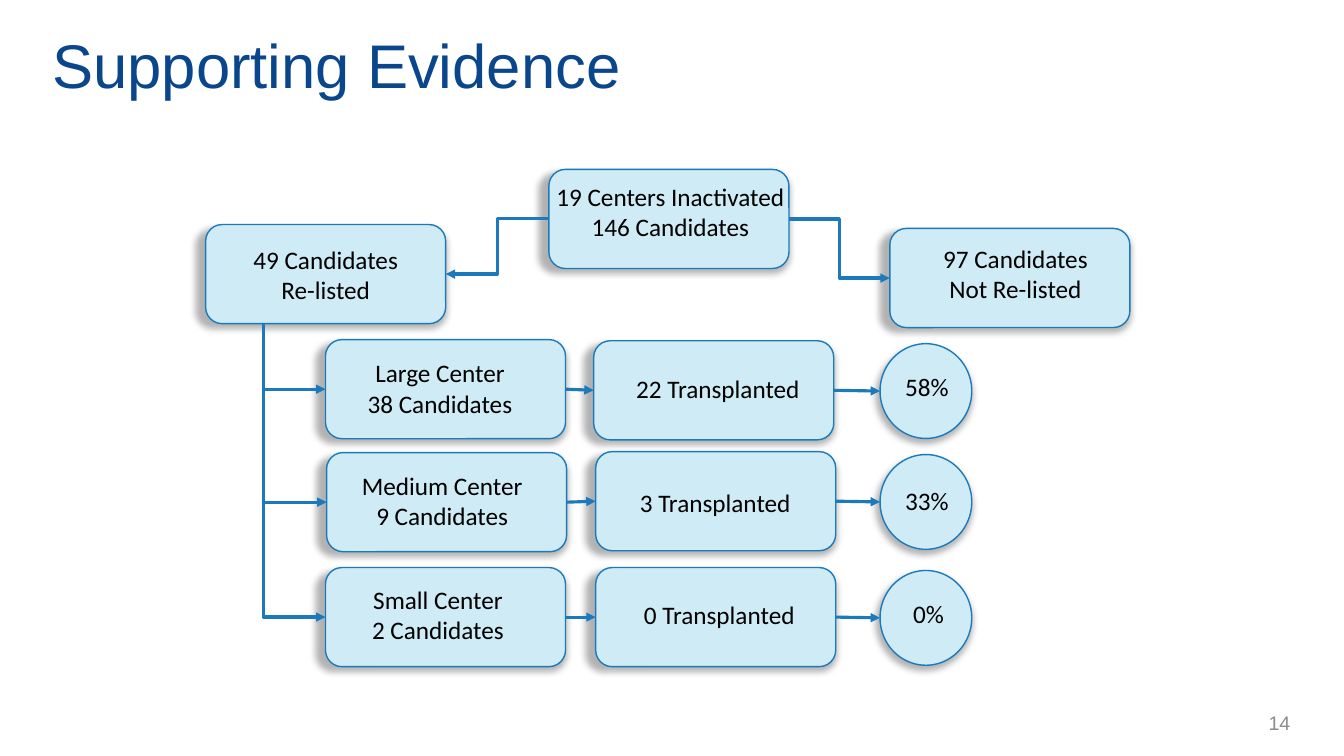
import pptx
import pptx.util
import pptx.dml.color
import pptx.enum.shapes
import pptx.enum.text
import pptx.oxml
import pptx.oxml.ns
from lxml import etree

Pt = pptx.util.Pt
Shape = pptx.enum.shapes.MSO_SHAPE
Link = pptx.enum.shapes.MSO_CONNECTOR
Align = pptx.enum.text.PP_ALIGN
Anchor = pptx.enum.text.MSO_ANCHOR
qn = pptx.oxml.ns.qn

COLORS = {"title": "0A468C", "fill": "CFEBF6", "line": "1C7ABC",
          "text": "000000", "page": "8C8C8C"}
BOX = (171.5, 70.8)
DISC = (65.5, 67.7)
SHADOW = (
    '<a:effectLst xmlns:a="http://schemas.openxmlformats.org/drawingml/2006/main">'
    '<a:outerShdw blurRad="63500" dist="38100" dir="5400000" sx="104000" algn="tr"'
    ' rotWithShape="0"><a:srgbClr val="000000"><a:alpha val="30000"/></a:srgbClr>'
    '</a:outerShdw></a:effectLst>')


def color(name):
    return pptx.dml.color.RGBColor.from_string(COLORS[name])


def write(frame, text, size=18, font="Calibri", tint="text",
          align=Align.CENTER, anchor=Anchor.MIDDLE, wrap=False):
    frame.word_wrap = wrap
    frame.vertical_anchor = anchor
    frame.text = text
    for para in frame.paragraphs:
        para.alignment = align
        para.font.size = Pt(size)
        para.font.name = font
        para.font.color.rgb = color(tint)


def label(slide, box, text, **style):
    area = slide.shapes.add_textbox(*map(Pt, box))
    write(area.text_frame, text, **style)


def node(slide, kind, box, text, shift, width=132, **style):
    left, top, wide, high = box
    shape = slide.shapes.add_shape(kind, *map(Pt, box))
    shape.fill.solid()
    shape.fill.fore_color.rgb = color("fill")
    shape.line.color.rgb = color("line")
    shape.line.width = Pt(1)
    shape.shadow.inherit = False
    props = shape.element.spPr
    props.replace(props.find(qn("a:effectLst")), pptx.oxml.parse_xml(SHADOW))
    tall = 51 if "\n" in text else 29
    x = left + wide / 2 + shift[0] - width / 2
    y = top + high / 2 + shift[1] - tall / 2
    label(slide, (x, y, width, tall), text, **style)
    return box


def arrow(slide, start, end, kind=Link.STRAIGHT):
    link = slide.shapes.add_connector(kind, *map(Pt, start + end))
    link.line.color.rgb = color("line")
    link.line.width = Pt(2.25)
    props = link.element.spPr
    etree.SubElement(props.find(qn("a:ln")), qn("a:tailEnd"), type="triangle")
    etree.SubElement(props, qn("a:effectLst"))
    return link


def branch(slide, start, end):
    mid_x, mid_y = (start[0] + end[0]) / 2, (start[1] + end[1]) / 2
    half_x, half_y = (end[0] - start[0]) / 2, (end[1] - start[1]) / 2
    link = arrow(slide, (mid_x + half_y, mid_y - half_x),
                 (mid_x - half_y, mid_y + half_x), Link.ELBOW)
    props = link.element.spPr
    props.find(qn("a:xfrm")).set("rot", "16200000")
    props.find(qn("a:prstGeom")).set("prst", "bentConnector2")


def west(box):
    return box[0], box[1] + box[3] / 2


def east(box):
    return box[0] + box[2], box[1] + box[3] / 2


def header(slide, box):
    title = slide.shapes.title
    title.left, title.top, title.width, title.height = map(Pt, box)
    write(title.text_frame, "Supporting Evidence", size=44, font="Arial",
          tint="title", align=Align.LEFT, wrap=True)


def split(slide, box):
    left, top = box
    kind = Shape.ROUNDED_RECTANGLE
    root = node(slide, kind, (left + 245.2, top, *BOX),
                "19 Centers Inactivated\n146 Candidates", (1, -5.4), 179)
    listed = node(slide, kind, (left, top + 39.4, *BOX),
                  "49 Candidates\nRe-listed", (0, 0))
    other = node(slide, kind, (left + 488.7, top + 42.2, *BOX),
                 "97 Candidates\nNot Re-listed", (4, -3.2))
    arrow(slide, west(root), east(listed), Link.ELBOW)
    arrow(slide, east(root), west(other), Link.ELBOW)
    return left + 41.2, top + 39.4 + BOX[1]


def row(slide, box, stem, tops, nudge, texts, shifts):
    left, top = box
    kind = Shape.ROUNDED_RECTANGLE
    center = node(slide, kind, (left + nudge[0], top, *BOX), texts[0], shifts[0])
    result = node(slide, kind, (left + 191.6 + nudge[1], top + tops[0], *BOX),
                  texts[1], shifts[1])
    rate = node(slide, Shape.OVAL, (left + 396.1, top + tops[1], *DISC),
                texts[2], shifts[2], 61.2, align=Align.LEFT,
                anchor=Anchor.TOP, wrap=True)
    branch(slide, stem, west(center))
    arrow(slide, east(center), west(result))
    arrow(slide, east(result), west(rate))


def main():
    deck = pptx.Presentation()
    deck.slide_width, deck.slide_height = Pt(960), Pt(540)
    slide = deck.slides.add_slide(deck.slide_layouts[5])
    header(slide, (30.2, 12.2, 917.3, 67))
    label(slide, (766.1, 501.8, 162.7, 28.8), "14", size=14, font="Arial",
          tint="page", align=Align.RIGHT, wrap=True)
    stem = split(slide, (146.9, 121))
    rows = [
        (242.6, (0.8, 2.9), (0, 0),
         ("Large Center\n38 Candidates", "22 Transplanted", "58%"),
         ((-4, -1), (2.9, -1.4), (8.6, -2.9))),
        (323.3, (-0.7, 1.4), (0.8, 1.4),
         ("Medium Center\n9 Candidates", "3 Transplanted", "33%"),
         ((-3.2, -1), (-0.4, 0.7), (8.6, -0.7))),
        (405.4, (0, 2.1), (0, 1.4),
         ("Small Center\n2 Candidates", "0 Transplanted", "0%"),
         ((-5.4, -1.8), (2.5, -2.2), (14.4, -2.9))),
    ]
    for top, *parts in rows:
        row(slide, (232.5, top), stem, *parts)
    deck.save("out.pptx")


if __name__ == "__main__":
    main()
